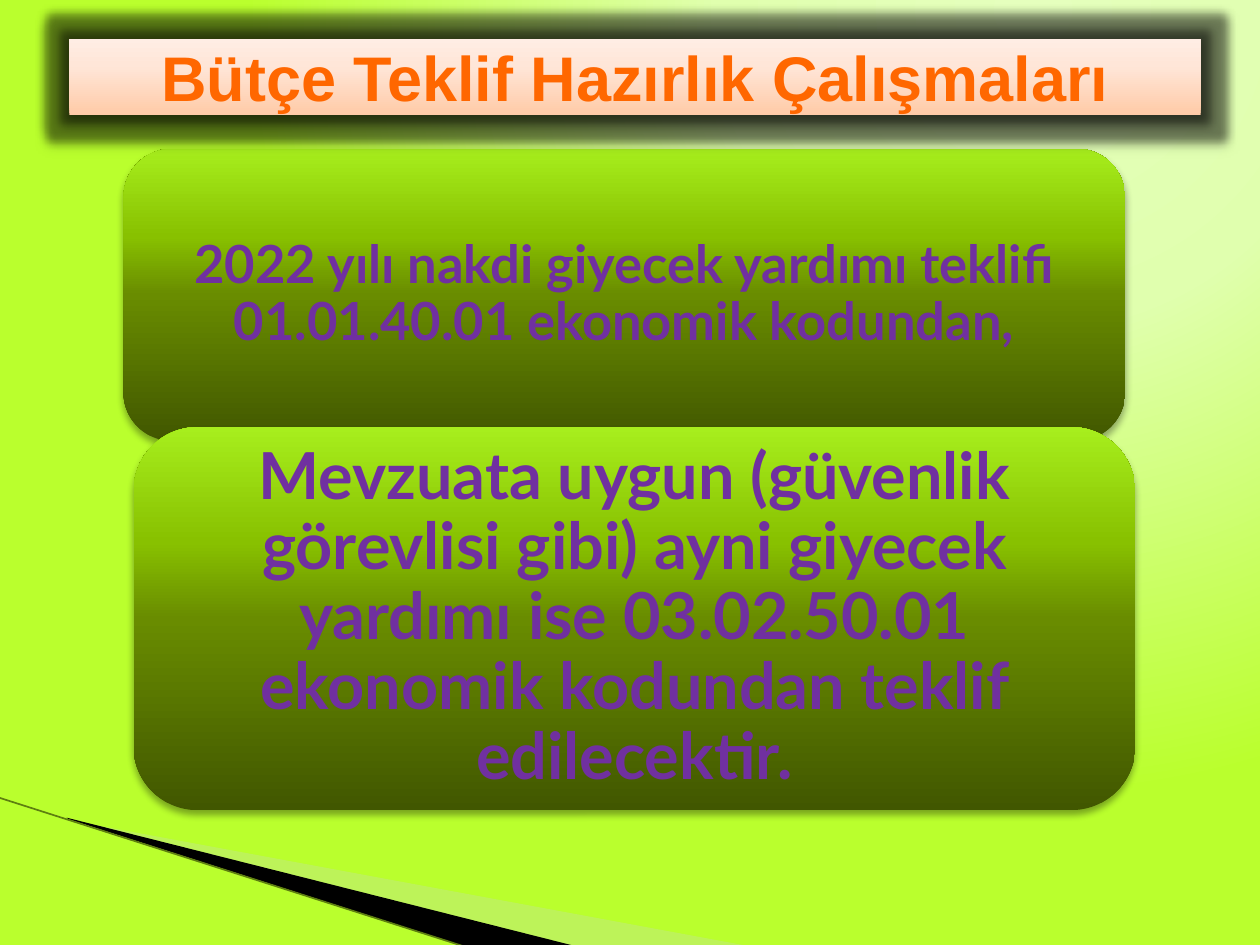
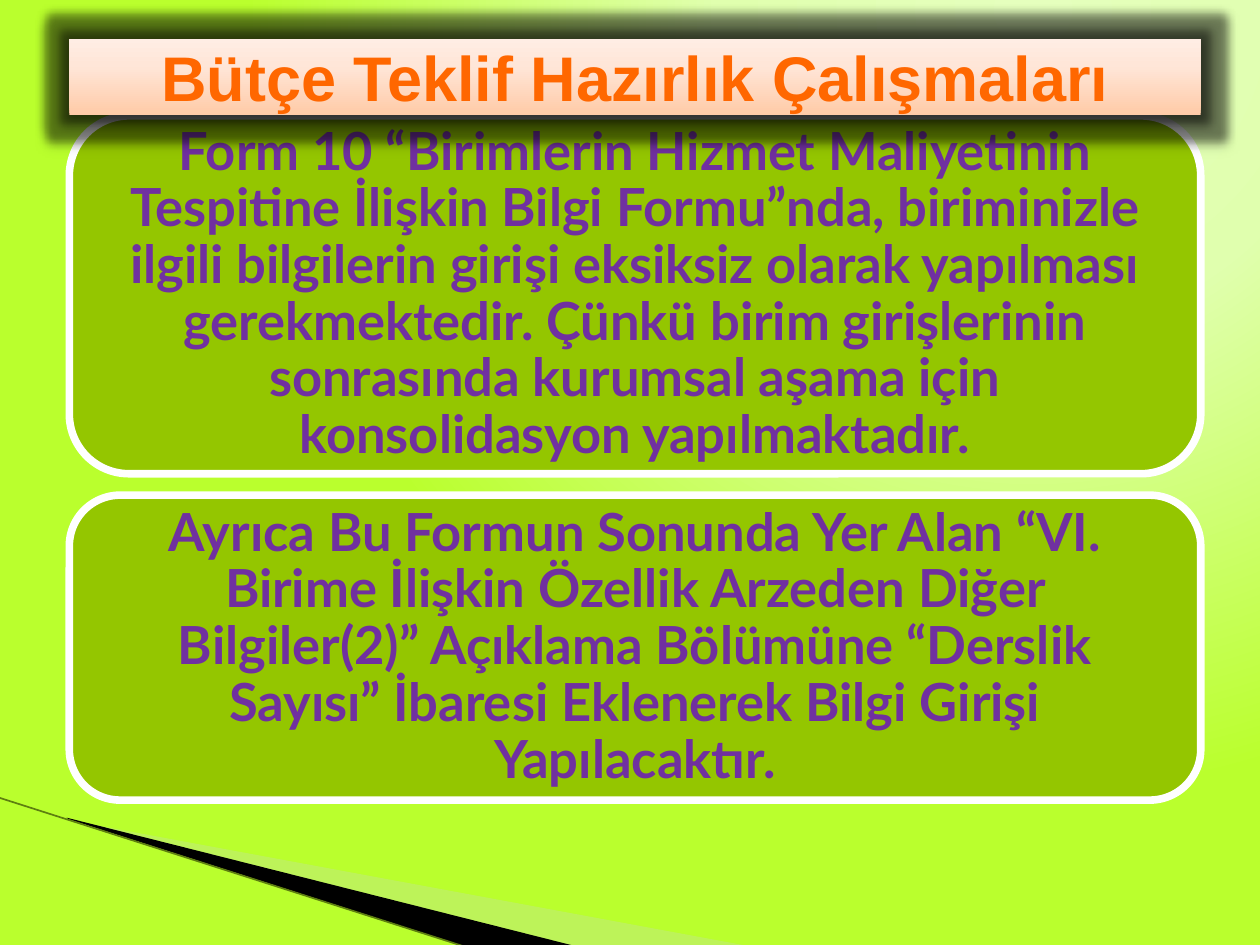
"""Build two budget-proposal slides with a shared title band, background and wedge."""
from lxml import etree
from pptx import Presentation
from pptx import util as u
from pptx.dml.color import RGBColor
from pptx.enum import shapes, text
from pptx.oxml import ns

ORANGE = RGBColor(0xFF, 0x67, 0x00)
PURPLE = RGBColor(0x70, 0x30, 0xA0)
GREEN = RGBColor(0x94, 0xC6, 0x00)
OLIVE = RGBColor(0x5E, 0x7F, 0x10)
PALE_GREEN = RGBColor(0xC3, 0xE1, 0x9D)
BLACK = RGBColor(0, 0, 0)
WHITE = RGBColor(0xFF, 0xFF, 0xFF)

BACKDROP = [(0, "E5FFBD"), (40, "E0FFAE"), (100, "BAFF2D")]
PEACH = [(0, "FFCBA8"), (65, "FFE6D8"), (100, "FFEDE4")]
GLOSSY = [(0, "415700"), (50, "698C00"), (70, "88C100"), (100, "A7EE1D")]

WIDTH, HEIGHT = 10, 7.5
MARGIN, BAND_WIDTH = 0.55, 8.98
TITLE = "Bütçe Teklif Hazırlık Çalışmaları"
TITLE_AREA = (MARGIN, 0.31, BAND_WIDTH, 0.6)
TITLE_FONT = {"name": "Arial", "size": u.Pt(36), "bold": True}
TITLE_GLOW = {"alpha": 45, "rad": u.Pt(10)}
TITLE_SHADOW = {"alpha": 32, "blurRad": u.Pt(3.5), "dist": u.Pt(2.2)}
BOX_SHADOW = {"alpha": 35, "blurRad": u.Pt(4), "dist": u.Pt(3)}
DOWNWARD = {"dir": 90 * 60000, "rotWithShape": 0}

WEDGES = [
    ([(0.55, 6.51), (5.95, 7.51), (4.56, 7.51), (0.55, 6.5)], PALE_GREEN, 40),
    ([(0.53, 6.49), (4.57, 7.51), (3.72, 7.52), (0.54, 6.5)], BLACK, 100),
]
EDGE = (-0.01, 6.33, 3.71, 7.52)

SLIDES = [
    {"glossy": True, "boxes": [
        {"area": (0.98, 1.18, 7.95, 2.32), "size": 30, "insets": (0.12, 0.06),
         "words": "2022 yılı nakdi giyecek yardımı teklifi 01.01.40.01 ekonomik kodundan,"},
        {"area": (1.06, 3.39, 7.95, 3.04), "size": 37, "insets": (0.15, 0.08),
         "words": "Mevzuata uygun (güvenlik görevlisi gibi) ayni giyecek yardımı ise "
                  "03.02.50.01 ekonomik kodundan teklif edilecektir."},
    ]},
    {"glossy": False, "boxes": [
        {"area": (MARGIN, 0.92, BAND_WIDTH, 2.84), "size": 30, "insets": (0.12, 0.12),
         "words": "Form 10 “Birimlerin Hizmet Maliyetinin Tespitine İlişkin Bilgi Formu”nda, "
                  "biriminizle ilgili bilgilerin girişi eksiksiz olarak yapılması gerekmektedir. "
                  "Çünkü birim girişlerinin sonrasında kurumsal aşama için konsolidasyon "
                  "yapılmaktadır."},
        {"area": (MARGIN, 3.93, BAND_WIDTH, 2.42), "size": 30, "insets": (0.12, 0.12),
         "words": "Ayrıca Bu Formun Sonunda Yer Alan “VI. Birime İlişkin Özellik Arzeden Diğer "
                  "Bilgiler(2)” Açıklama Bölümüne “Derslik Sayısı” İbaresi Eklenerek Bilgi "
                  "Girişi Yapılacaktır."},
    ]},
]


def add_xml(parent, tag, **attributes):
    return etree.SubElement(parent, ns.qn(tag), {k: str(v) for k, v in attributes.items()})


def set_gradient(fill, owner, stops, radial=False):
    fill.gradient()
    gradient = owner.find(".//" + ns.qn("a:gradFill"))
    for child in list(gradient):
        gradient.remove(child)
    stop_list = add_xml(gradient, "a:gsLst")
    for position, colour in stops:
        stop = add_xml(stop_list, "a:gs", pos=position * 1000)
        add_xml(stop, "a:srgbClr", val=colour)
    if radial:
        focus = add_xml(gradient, "a:path", path="circle")
        add_xml(focus, "a:fillToRect", l=65000, t=0, r=0, b=98000)
    else:
        add_xml(gradient, "a:lin", ang=270 * 60000, scaled=0)


def add_effect(shape, tag, alpha, **attributes):
    effects = shape._element.spPr.find(ns.qn("a:effectLst"))
    colour = add_xml(add_xml(effects, tag, **attributes), "a:srgbClr", val=BLACK)
    add_xml(colour, "a:alpha", val=alpha * 1000)


def add_panel(slide, kind, area, words, colour, font, insets=(0.1, 0.05), spacing=1.0):
    panel = slide.shapes.add_shape(kind, *map(u.Inches, area))
    panel.shadow.inherit = False
    panel.line.fill.background()
    frame = panel.text_frame
    across, down = map(u.Inches, insets)
    layout = {"word_wrap": True, "vertical_anchor": text.MSO_ANCHOR.MIDDLE,
              "margin_left": across, "margin_right": across,
              "margin_top": down, "margin_bottom": down}
    for name, value in layout.items():
        setattr(frame, name, value)
    paragraph = frame.paragraphs[0]
    paragraph.alignment = text.PP_ALIGN.CENTER
    paragraph.line_spacing = spacing
    run = paragraph.add_run()
    run.text = words
    for name, value in font.items():
        setattr(run.font, name, value)
    run.font.color.rgb = colour
    return panel


def add_backdrop(slide):
    set_gradient(slide.background.fill, slide._element, BACKDROP, radial=True)
    for corners, colour, opacity in WEDGES:
        start, *rest = [(u.Inches(x), u.Inches(y)) for x, y in corners]
        builder = slide.shapes.build_freeform(*start)
        builder.add_line_segments(rest, close=True)
        wedge = builder.convert_to_shape()
        wedge.shadow.inherit = False
        wedge.line.fill.background()
        wedge.fill.solid()
        wedge.fill.fore_color.rgb = colour
        if opacity < 100:
            add_xml(wedge._element.spPr.find(".//" + ns.qn("a:srgbClr")), "a:alpha",
                    val=opacity * 1000)
    edge = slide.shapes.add_connector(shapes.MSO_CONNECTOR.STRAIGHT, *map(u.Inches, EDGE))
    edge.line.color.rgb = OLIVE
    edge.line.width = u.Pt(0.95)
    add_xml(edge._element.spPr, "a:effectLst")


def add_box(slide, box, glossy):
    font = {"name": "Lato", "size": u.Pt(box["size"]), "bold": True}
    panel = add_panel(slide, shapes.MSO_SHAPE.ROUNDED_RECTANGLE, box["area"], box["words"],
                      PURPLE, font, box["insets"], 0.9)
    if glossy:
        set_gradient(panel.fill, panel._element, GLOSSY)
        add_effect(panel, "a:outerShdw", **BOX_SHADOW, **DOWNWARD)
    else:
        panel.fill.solid()
        panel.fill.fore_color.rgb = GREEN
        panel.line.color.rgb = WHITE
        panel.line.width = u.Pt(4.33)


def add_title(slide):
    band = add_panel(slide, shapes.MSO_SHAPE.RECTANGLE, TITLE_AREA, TITLE, ORANGE, TITLE_FONT)
    set_gradient(band.fill, band._element, PEACH)
    add_effect(band, "a:glow", **TITLE_GLOW)
    add_effect(band, "a:outerShdw", **TITLE_SHADOW, **DOWNWARD)


def main():
    deck = Presentation()
    deck.slide_width, deck.slide_height = u.Inches(WIDTH), u.Inches(HEIGHT)
    for content in SLIDES:
        slide = deck.slides.add_slide(deck.slide_layouts[6])
        add_backdrop(slide)
        for box in content["boxes"]:
            add_box(slide, box, content["glossy"])
        add_title(slide)
    deck.save("out.pptx")


if __name__ == "__main__":
    main()
